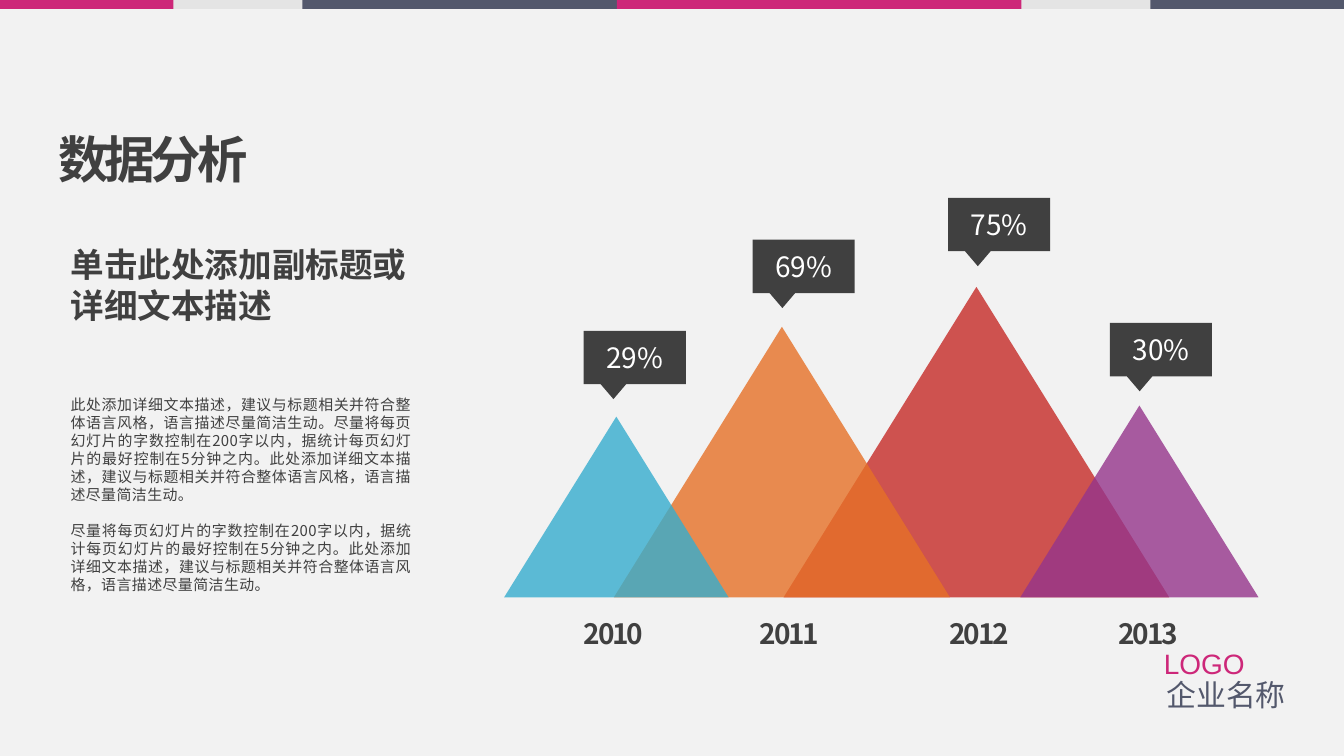
from pptx import Presentation
from pptx.dml.color import RGBColor
from pptx.enum.shapes import MSO_SHAPE as Shape
from pptx.enum.text import MSO_ANCHOR as Anchor, MSO_AUTO_SIZE as AutoSize, PP_ALIGN as Align
from pptx.oxml.ns import qn
from pptx.util import Pt
from lxml.etree import SubElement

PAPER = RGBColor(0xF2, 0xF2, 0xF2)
INK = RGBColor(0x40, 0x40, 0x40)
WHITE = RGBColor(0xFF, 0xFF, 0xFF)
SLATE = RGBColor(0x53, 0x58, 0x6C)
PINK = RGBColor(0xCD, 0x27, 0x79)
GREY = RGBColor(0xE4, 0xE4, 0xE4)
RED = RGBColor(0xC6, 0x2A, 0x27)
PURPLE = RGBColor(0x95, 0x35, 0x8B)
ORANGE = RGBColor(0xE6, 0x71, 0x27)
BLUE = RGBColor(0x36, 0xAD, 0xCE)
CJK = "Noto Sans CJK SC"


def add_block(kind, left, top, width, height, color):
    block = page.shapes.add_shape(kind, Pt(left), Pt(top), Pt(width), Pt(height))
    block.shadow.inherit = False
    block.fill.solid()
    block.fill.fore_color.rgb = color
    block.line.fill.background()
    return block


def write(shape, texts, size, color=INK, bold=False, align=Align.LEFT,
          spacing=0, anchor=Anchor.TOP, wrap=True, font=CJK):
    frame = shape.text_frame
    frame.word_wrap = wrap
    frame.auto_size = AutoSize.NONE
    frame.vertical_anchor = anchor
    frame.margin_left = frame.margin_right = Pt(5.2)
    frame.margin_top = frame.margin_bottom = Pt(2.6)
    for index, text in enumerate(texts):
        para = frame.add_paragraph() if index else frame.paragraphs[0]
        para.alignment = align
        para.line_spacing = Pt(size * 1.2)
        para.space_before = Pt(size * 1.2 if index else 0)
        span = para.add_run()
        span.text = text
        span.font.name = font
        span.font.size = Pt(size)
        span.font.bold = bold
        span.font.color.rgb = color
        props = span.font._element
        SubElement(props, qn("a:ea")).set("typeface", font)
        if spacing:
            props.set("spc", str(round(spacing * 100)))


deck = Presentation()
deck.slide_width, deck.slide_height = Pt(720), Pt(405)
page = deck.slides.add_slide(deck.slide_layouts[5])
page.background.fill.solid()
page.background.fill.fore_color.rgb = PAPER

# Stripe along the top edge
for left, width, color in [(498.2, 221.8, SLATE), (0, 221.8, PINK), (133.2, 221.8, SLATE),
                           (92.9, 69.1, GREY), (330.5, 221.8, PINK), (547.2, 69.1, GREY)]:
    add_block(Shape.RECTANGLE, left, 0, width, 4.8, color)

# Title
title = page.shapes.title
title.left, title.top, title.width, title.height = Pt(26), Pt(66.2), Pt(177), Pt(38.2)
write(title, ["数据分析"], 27, bold=True, spacing=-2.2)

# Peaks, callouts and years, from back to front
BASELINE = 320
peaks = [
    ("2012", "75%", RED, 419.8, 206.6, 507.9, 106, 502.6),
    ("2013", "30%", PURPLE, 546.6, 127.6, 594.6, 173, 593.3),
    ("2011", "69%", ORANGE, 328.9, 180, 403.2, 128.4, 401),
    ("2010", "29%", BLUE, 270.1, 120.2, 312.7, 177.2, 306.7),
]
for year, share, color, left, width, callout_left, callout_top, year_left in peaks:
    height = width * 0.805
    peak = add_block(Shape.ISOSCELES_TRIANGLE, left, BASELINE - height, width, height, color)
    rgb = peak._element.spPr.find(".//" + qn("a:srgbClr"))
    SubElement(rgb, qn("a:alpha")).set("val", "80000")

    callout = add_block(Shape.RECTANGULAR_CALLOUT, callout_left, callout_top, 54.7, 28.6, INK)
    callout.adjustments[0], callout.adjustments[1] = -0.208, 0.781
    write(callout, [share], 15, WHITE, align=Align.CENTER, anchor=Anchor.MIDDLE)

    label = page.shapes.add_textbox(Pt(year_left), Pt(327.6), Pt(43.9), Pt(23.8))
    write(label, [year], 15, bold=True, align=Align.CENTER, spacing=-1.1, wrap=False)

# Subtitle
subtitle = page.shapes.add_textbox(Pt(32.6), Pt(128.2), Pt(198), Pt(49))
write(subtitle, ["单击此处添加副标题或详细文本描述"], 18, bold=True)

# Description
description = page.shapes.add_textbox(Pt(32.6), Pt(209.5), Pt(193), Pt(115.2))
write(description, [
    "此处添加详细文本描述，建议与标题相关并符合整体语言风格，语言描述尽量简洁生动。"
    "尽量将每页幻灯片的字数控制在200字以内，据统计每页幻灯片的最好控制在5分钟之内。"
    "此处添加详细文本描述，建议与标题相关并符合整体语言风格，语言描述尽量简洁生动。",
    "尽量将每页幻灯片的字数控制在200字以内，据统计每页幻灯片的最好控制在5分钟之内。"
    "此处添加详细文本描述，建议与标题相关并符合整体语言风格，语言描述尽量简洁生动。",
], 8, align=Align.JUSTIFY, spacing=0.2)

# Company name and logo text
for text, size, color, left, top, width, height in [
        ("企业名称", 16, SLATE, 619.8, 357.1, 97.2, 30.2),
        ("LOGO", 15, PINK, 618.3, 341.3, 100, 28.1)]:
    box = page.shapes.add_textbox(Pt(left), Pt(top), Pt(width), Pt(height))
    write(box, [text], size, color, anchor=Anchor.MIDDLE, font="Arial")

deck.save("out.pptx")
